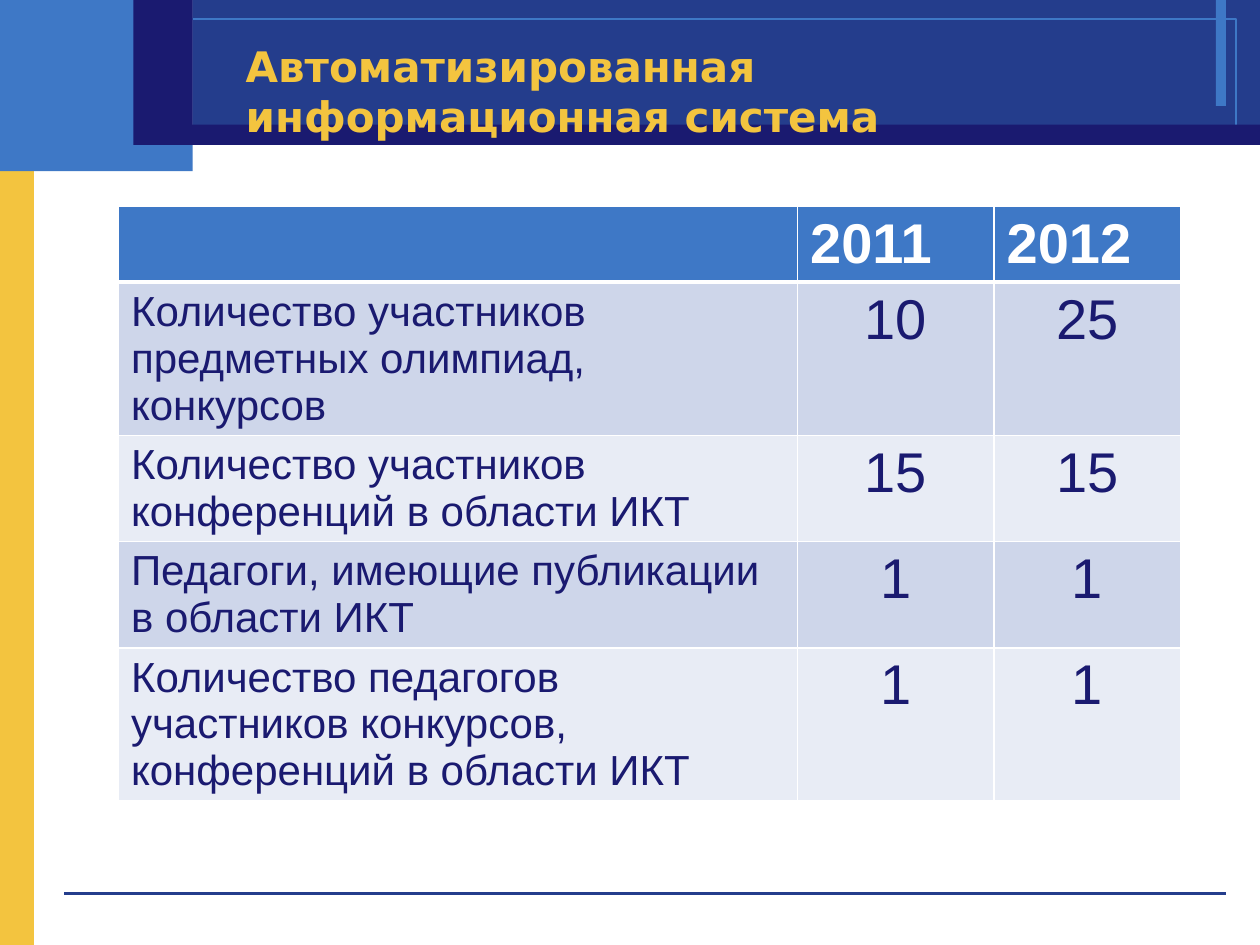
"""Build a slide with a banner title and a table of yearly counts."""
from typing import NamedTuple, Optional

from lxml.etree import SubElement
from pptx import Presentation
from pptx.dml.color import RGBColor
from pptx.enum.shapes import MSO_CONNECTOR, MSO_SHAPE
from pptx.enum.text import MSO_ANCHOR, MSO_AUTO_SIZE, PP_ALIGN
from pptx.oxml import parse_xml
from pptx.oxml.ns import nsdecls, qn
from pptx.util import Inches, Pt

GOLD = RGBColor(0xF3, 0xC4, 0x3F)
BLUE = RGBColor(0x3E, 0x78, 0xC6)
ROYAL = RGBColor(0x24, 0x3D, 0x8C)
NAVY = RGBColor(0x1A, 0x1A, 0x70)
WHITE = RGBColor(0xFF, 0xFF, 0xFF)
BANDS = RGBColor(0xCE, 0xD6, 0xEA), RGBColor(0xE8, 0xEC, 0xF5)


class Block(NamedTuple):
    left: float
    top: float
    width: float
    height: float
    fill: Optional[RGBColor] = None
    line: Optional[RGBColor] = None


class Count(NamedTuple):
    label: str
    first: str
    second: str


BLOCKS = [
    Block(0, 1.06, 0.27, 6.44, fill=GOLD),
    Block(0, 0, 1.53, 1.36, fill=BLUE),
    Block(1.53, 0, 8.47, 1.15, fill=ROYAL),
    Block(9.65, 0, 0.08, 0.84, fill=BLUE),
    Block(0.2, 0.15, 9.61, 0.85, line=BLUE),
    Block(1.3, 0.99, 8.7, 0.16, fill=NAVY),
    Block(1.06, 0, 0.47, 1.15, fill=NAVY),
]
COUNTS = [
    Count("", "2011", "2012"),
    Count("Количество участников предметных олимпиад, конкурсов", "10", "25"),
    Count("Количество участников конференций в области ИКТ", "15", "15"),
    Count("Педагоги, имеющие публикации в области ИКТ", "1", "1"),
    Count("Количество педагогов участников конкурсов, конференций в области ИКТ", "1", "1"),
]
WIDTHS = 5.39, 1.56, 1.48
ROW = 0.59


def write(frame, text: str, *, size: int, color: RGBColor, font: str = "Arial",
          bold: bool = False, align: PP_ALIGN = PP_ALIGN.LEFT) -> None:
    para = frame.paragraphs[0]
    para.alignment = align
    run = para.add_run()
    run.text = text
    run.font.name, run.font.size, run.font.bold = font, Pt(size), bold
    run.font.color.rgb = color


def draw_block(slide, block: Block) -> None:
    box = [Inches(side) for side in block[:4]]
    shape = slide.shapes.add_shape(MSO_SHAPE.RECTANGLE, *box)
    shape.shadow.inherit = False
    for part, color in ((shape.fill, block.fill), (shape.line.fill, block.line)):
        if color is None:
            part.background()
        else:
            part.solid()
            part.fore_color.rgb = color
    if block.line is not None:
        shape.line.width = Pt(0)


def draw_rule(slide) -> None:
    rule = slide.shapes.add_connector(
        MSO_CONNECTOR.STRAIGHT, Inches(0.51), Inches(7.09), Inches(9.73), Inches(7.09))
    rule.line.color.rgb = ROYAL
    rule.line.width = Pt(0)
    SubElement(rule._element.spPr, qn("a:effectLst"))


def draw_title(slide) -> None:
    title = slide.shapes.title
    title.left, title.top = Inches(1.85), Inches(0.26)
    title.width, title.height = Inches(7.57), Inches(0.92)
    frame = title.text_frame
    frame.word_wrap = True
    frame.auto_size = MSO_AUTO_SIZE.NONE
    frame.vertical_anchor = MSO_ANCHOR.MIDDLE
    write(frame, "Автоматизированная информационная система",
          size=24, color=GOLD, font="DejaVu Sans", bold=True)
    slide.shapes._spTree.append(title._element)


def edge(cell, head: bool, below: bool) -> None:
    widths = {"lnL": 1, "lnR": 1, "lnT": 3 if below else 1, "lnB": 3 if head else 1}
    props = cell._tc.get_or_add_tcPr()
    for spot, (tag, width) in enumerate(widths.items()):
        props.insert(spot, parse_xml(
            f'<a:{tag} {nsdecls("a")} w="{Pt(width)}"><a:solidFill>'
            f'<a:srgbClr val="{WHITE}"/></a:solidFill></a:{tag}>'))


def draw_table(slide) -> None:
    table = slide.shapes.add_table(
        len(COUNTS), len(WIDTHS), Inches(0.94), Inches(1.64),
        Inches(sum(WIDTHS)), Inches(ROW * len(COUNTS))).table
    for column, width in zip(table.columns, WIDTHS):
        column.width = Inches(width)
    for row, count in enumerate(COUNTS):
        head = row == 0
        for col, text in enumerate(count):
            cell = table.cell(row, col)
            cell.fill.solid()
            cell.fill.fore_color.rgb = BLUE if head else BANDS[(row - 1) % 2]
            edge(cell, head, row == 1)
            if text:
                write(cell.text_frame, text, size=32 if col else 24,
                      color=WHITE if head else NAVY, bold=head,
                      align=PP_ALIGN.CENTER if col and not head else PP_ALIGN.LEFT)


def main() -> None:
    deck = Presentation()
    deck.slide_width, deck.slide_height = Inches(10), Inches(7.5)
    slide = deck.slides.add_slide(deck.slide_layouts[5])
    for block in BLOCKS:
        draw_block(slide, block)
    draw_rule(slide)
    draw_title(slide)
    draw_table(slide)
    deck.save("out.pptx")


if __name__ == "__main__":
    main()
